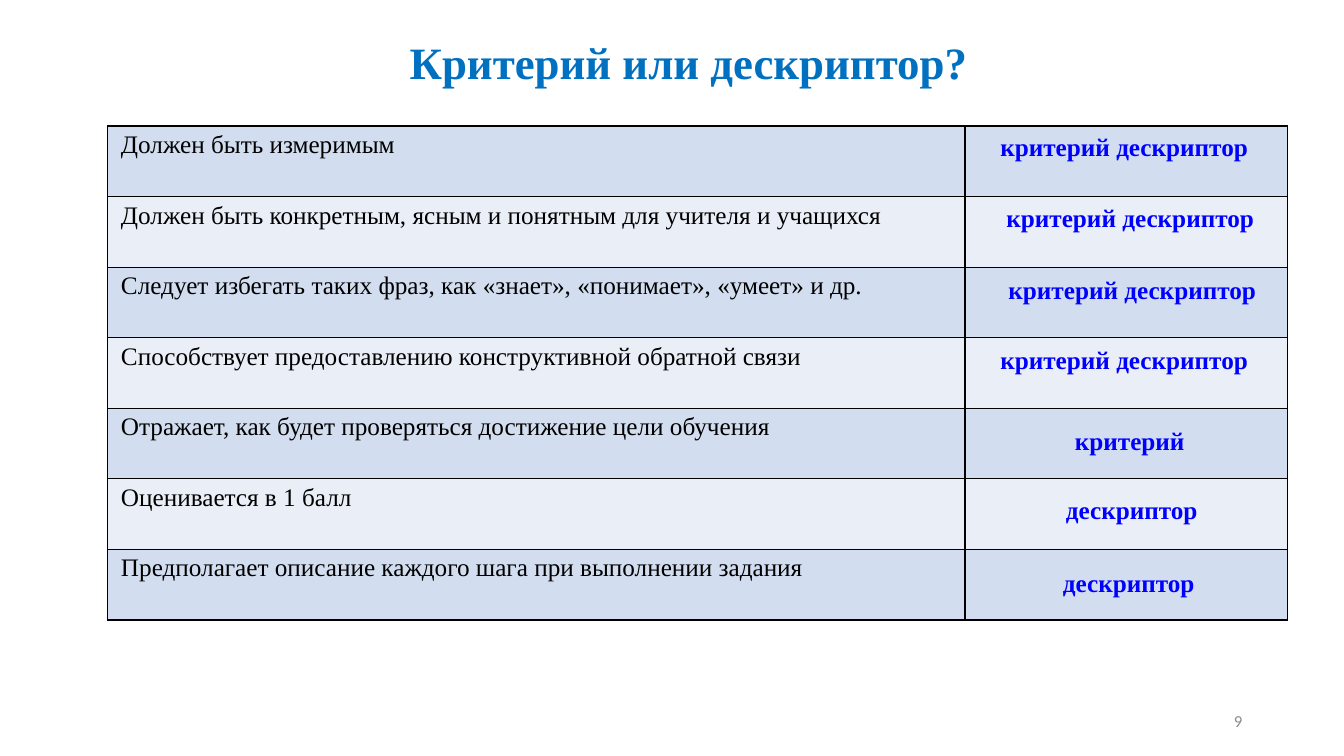
from lxml import etree
from pptx import Presentation
from pptx.dml.color import RGBColor
from pptx.enum import text
from pptx.oxml import ns
from pptx.util import Inches, Pt

HUES = {"title": "0070C0", "answer": "0000FF", "ink": "000000",
        "dark": "D2DEEF", "light": "EAEFF7", "page": "8C8C8C"}
SERIF = "Times New Roman"
BOTH = "критерий дескриптор"

# statement, answer, left, top and width of the answer
ROWS = [
    ("Должен быть измеримым", BOTH, 9.61, 1.25, 3.08),
    ("Должен быть конкретным, ясным и понятным для учителя и учащихся",
     BOTH, 9.67, 1.96, 3.08),
    ("Следует избегать таких фраз, как «знает», «понимает», «умеет» и др.",
     BOTH, 9.69, 2.67, 3.08),
    ("Способствует предоставлению конструктивной обратной связи",
     BOTH, 9.61, 3.37, 3.08),
    ("Отражает, как будет проверяться достижение цели обучения",
     "критерий", 9.65, 4.17, 3.11),
    ("Оценивается в 1 балл", "дескриптор", 9.67, 4.85, 3.11),
    ("Предполагает описание каждого шага при выполнении задания",
     "дескриптор", 9.64, 5.58, 3.11),
]


def write(frame, words, size, hue, align, bold=False, face=SERIF):
    """Put one formatted run into the first paragraph of the frame."""
    para = frame.paragraphs[0]
    para.alignment = align
    run = para.add_run()
    run.text = words
    run.font.size = Pt(size)
    run.font.name = face
    run.font.bold = bold
    run.font.color.rgb = RGBColor.from_string(HUES[hue])


def outline(cell):
    """Draw a 1 pt line on all four sides of the cell."""
    props = cell._tc.get_or_add_tcPr()
    for spot, side in enumerate(("lnL", "lnR", "lnT", "lnB")):
        line = etree.Element(ns.qn("a:" + side), w=str(Pt(1)))
        fill = etree.SubElement(line, ns.qn("a:solidFill"))
        etree.SubElement(fill, ns.qn("a:srgbClr"), val=HUES["ink"])
        props.insert(spot, line)


deck = Presentation()
deck.slide_width, deck.slide_height = Inches(13.33), Inches(7.5)
slide = deck.slides.add_slide(deck.slide_layouts[5])
align = text.PP_ALIGN

# Title
title = slide.shapes.title
title.left, title.top = Inches(1.22), Inches(0.25)
title.width, title.height = Inches(11.22), Inches(0.78)
title.text_frame.vertical_anchor = text.MSO_ANCHOR.MIDDLE
write(title.text_frame, "Критерий или дескриптор?", 32, "title",
      align.CENTER, True)
title.text_frame.paragraphs[0].line_spacing = 0.9

# Table of statements
table = slide.shapes.add_table(len(ROWS), 2, Inches(1.07), Inches(1.25),
                               Inches(11.7), Inches(0.7 * len(ROWS))).table
table.columns[0].width = Inches(8.5)
table.columns[1].width = Inches(3.2)
table.first_row = False
for num, row in enumerate(ROWS):
    table.rows[num].height = Inches(0.7)
    for cell in table.rows[num].cells:
        cell.fill.solid()
        shade = HUES["light" if num % 2 else "dark"]
        cell.fill.fore_color.rgb = RGBColor.from_string(shade)
        cell.margin_left = cell.margin_right = Inches(0.13)
        outline(cell)
    write(table.cell(num, 0).text_frame, row[0], 18, "ink", align.LEFT)

# Answers over the right column
for _, answer, left, top, width in ROWS:
    box = slide.shapes.add_textbox(Inches(left), Inches(top),
                                   Inches(width), Inches(0.4))
    box.text_frame.word_wrap = True
    box.text_frame.auto_size = text.MSO_AUTO_SIZE.SHAPE_TO_FIT_TEXT
    write(box.text_frame, answer, 18, "answer", align.CENTER, True)

# Page number
page = slide.shapes.add_textbox(Inches(9.42), Inches(6.95),
                                Inches(3), Inches(0.4))
page.text_frame.word_wrap = True
page.text_frame.vertical_anchor = text.MSO_ANCHOR.MIDDLE
write(page.text_frame, "9", 12, "page", align.RIGHT, face="Calibri")

deck.save("out.pptx")
